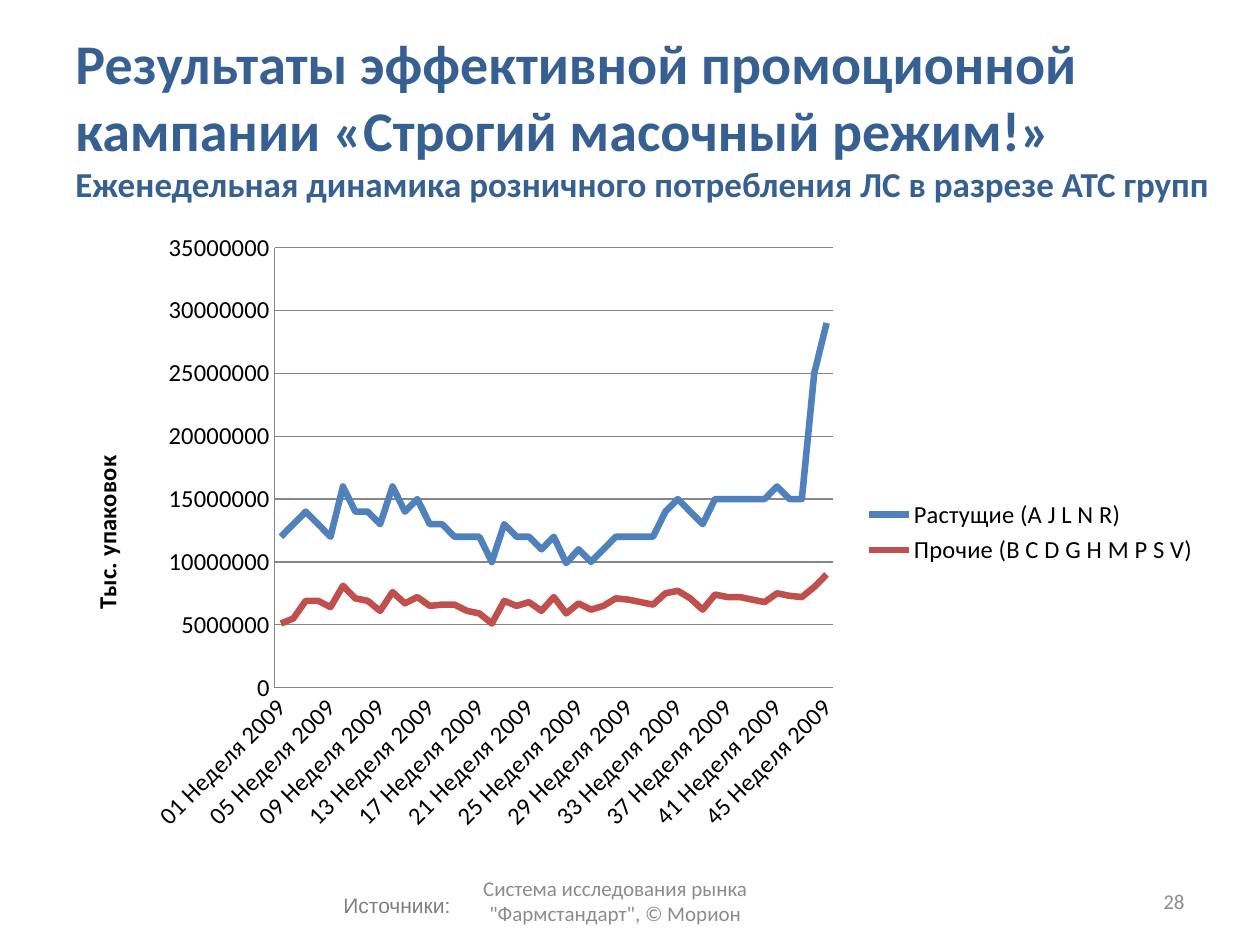
import pptx
import pptx.util
import pptx.dml.color
import pptx.chart.data
import pptx.enum.chart
import pptx.enum.text
import pptx.oxml
import pptx.oxml.ns

Pt = pptx.util.Pt
qn = pptx.oxml.ns.qn
enum = pptx.enum.chart
align = pptx.enum.text.PP_ALIGN
anchor = pptx.enum.text.MSO_ANCHOR
space = 'xmlns:c="http://schemas.openxmlformats.org/drawingml/2006/chart"'
wide, high = 656, 356.4


def tint(color):
    return pptx.dml.color.RGBColor.from_string(color)


def paint(font, size, color, name="Calibri", bold=False):
    font.size, font.name, font.bold = Pt(size), name, bold
    font.color.rgb = tint(color)


deck = pptx.Presentation()
deck.slide_width, deck.slide_height = Pt(720), Pt(540)
slide = deck.slides.add_slide(deck.slide_layouts[6])

# Title and footer texts: left, top, width, height, alignment, anchor, runs
gray = "8C8C8C"
boxes = [
    (36, 21.6, 667.5, 90, align.LEFT, anchor.MIDDLE, [
        ("Результаты эффективной промоционной кампании «Строгий масочный режим!»",
         32, "376092", "Calibri", True),
        ("Еженедельная динамика розничного потребления ЛС в разрезе АТС групп",
         20, "376092", "Calibri", True)]),
    (516, 500.5, 168, 28.75, align.RIGHT, anchor.MIDDLE, [("28", 12, gray)]),
    (237.6, 500.5, 228, 28.75, align.CENTER, anchor.MIDDLE, [
        ('Система исследования рынка "Фармстандарт", © Морион', 12, gray)]),
    (180.5, 506.5, 84, 21.6, align.RIGHT, anchor.TOP, [
        ("Источники:", 12, "808080", "Arial")]),
]
for left, top, width, height, side, fix, runs in boxes:
    frame = slide.shapes.add_textbox(Pt(left), Pt(top), Pt(width), Pt(height)).text_frame
    frame.word_wrap = True
    frame.vertical_anchor = fix
    para = frame.paragraphs[0]
    para.alignment = side
    for i, (text, *style) in enumerate(runs):
        if i:
            para.add_line_break()
        run = para.add_run()
        run.text = text
        paint(run.font, *style)

# Weekly sales, in millions of packs
sales = [
    ("Растущие (A J L N R)", "4F81BD", [
        12, 13, 14, 13, 12, 16, 14, 14, 13, 16, 14, 15, 13, 13, 12,
        12, 12, 10, 13, 12, 12, 11, 12, 9.9, 11, 10, 11, 12, 12, 12,
        12, 14, 15, 14, 13, 15, 15, 15, 15, 15, 16, 15, 15, 25, 29]),
    ("Прочие (B C D G H M P S V)", "C0504D", [
        5.1, 5.5, 6.9, 6.9, 6.4, 8.1, 7.1, 6.9, 6.1, 7.6, 6.7, 7.2, 6.5, 6.6, 6.6,
        6.1, 5.9, 5.1, 6.9, 6.5, 6.8, 6.1, 7.2, 5.9, 6.7, 6.2, 6.5, 7.1, 7, 6.8,
        6.6, 7.5, 7.7, 7.1, 6.2, 7.4, 7.2, 7.2, 7, 6.8, 7.5, 7.3, 7.2, 8, 9]),
]
data = pptx.chart.data.CategoryChartData()
data.categories = [f"{week:02d} Неделя 2009" for week in range(1, 46)]
for name, color, packs in sales:
    data.add_series(name, [round(pack * 1000000) for pack in packs])

# Line chart
chart = slide.shapes.add_chart(
    enum.XL_CHART_TYPE.LINE, Pt(36), Pt(126), Pt(wide), Pt(high), data).chart
paint(chart.font, 14, "000000")
chart.has_title = False
chart.has_legend = True
chart.legend.position = enum.XL_LEGEND_POSITION.RIGHT
chart.legend.include_in_layout = False
plot = chart.plots[0]
plot.vary_by_categories = False
for line, (name, color, packs) in zip(plot.series, sales):
    line.smooth = False
    line.marker.style = enum.XL_MARKER_STYLE.NONE
    line.format.line.width = Pt(3.75)
    line.format.line.color.rgb = tint(color)

# Axes
weeks, packs = chart.category_axis, chart.value_axis
packs.minimum_scale, packs.maximum_scale, packs.major_unit = 0, 35000000, 5000000
packs.has_major_gridlines = True
for axis in (weeks, packs):
    axis.major_tick_mark = axis.minor_tick_mark = enum.XL_TICK_MARK.NONE
    paint(axis.tick_labels.font, 14, "000000")
for part in (weeks, packs, packs.major_gridlines):
    part.format.line.width = Pt(0.75)
    part.format.line.color.rgb = tint("868686")
packs.tick_labels.number_format = "General"
packs.tick_labels.number_format_is_linked = False
frame = packs.axis_title.text_frame
run = frame.paragraphs[0].add_run()
run.text = "Тыс. упаковок"
paint(run.font, 14, "000000", bold=True)
body = frame._txBody.bodyPr
body.set("rot", "-5400000")
body.set("vert", "horz")

# Every fourth week label, slanted
node = weeks._element
node.find(qn("c:txPr")).find(qn("a:bodyPr")).set("rot", "-2700000")
skip = pptx.oxml.parse_xml(f'<c:tickLblSkip {space} val="4"/>')
node.find(qn("c:noMultiLvlLbl")).addprevious(skip)

# Plot and axis title positions, in points within the chart
spots = [
    (chart._chartSpace.chart.plotArea, 0, {"x": 121, "y": 15.5, "w": 319, "h": 251.5}),
    (packs.axis_title._element, 1, {"x": 12.8, "y": 131.8}),
]
for node, index, sides in spots:
    for old in node.findall(qn("c:layout")):
        node.remove(old)
    tags = '<c:layoutTarget val="inner"/>' if "w" in sides else ""
    tags += '<c:xMode val="edge"/><c:yMode val="edge"/>'
    for side, size in sides.items():
        tags += f'<c:{side} val="{size / (wide if side in "xw" else high)}"/>'
    node.insert(index, pptx.oxml.parse_xml(
        f"<c:layout {space}><c:manualLayout>{tags}</c:manualLayout></c:layout>"))

deck.save("out.pptx")
